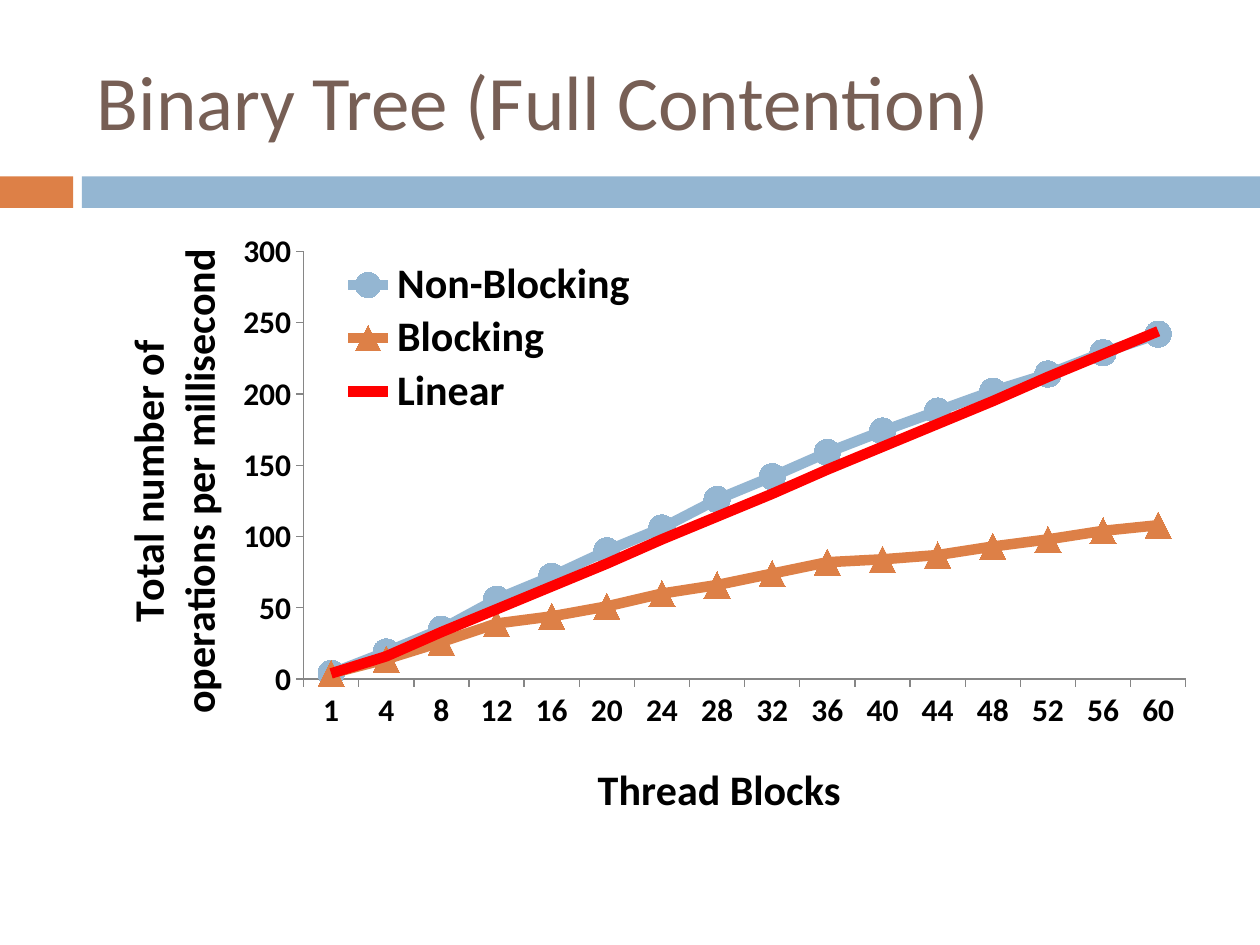
"""Build the Binary Tree (Full Contention) slide with its throughput line chart."""
from lxml import etree
from pptx import Presentation
from pptx.chart.data import CategoryChartData
from pptx.dml.color import RGBColor
from pptx.enum.chart import XL_CHART_TYPE as ChartType
from pptx.enum.chart import XL_LEGEND_POSITION as LegendPosition
from pptx.enum.chart import XL_MARKER_STYLE as MarkerStyle
from pptx.enum.chart import XL_TICK_MARK as TickMark
from pptx.enum.shapes import MSO_SHAPE as ShapeType
from pptx.enum.text import MSO_ANCHOR as Anchor
from pptx.oxml.ns import qn
from pptx.util import Inches, Pt

COLORS = {
    "blue": "94B6D2",
    "orange": "DD8047",
    "red": "FF0000",
    "brown": "775F55",
    "black": "000000",
    "gray": "868686",
}
FONT = "Calibri"


def style_font(font, size, color, bold=False):
    font.name = FONT
    font.size = Pt(size)
    font.bold = bold
    font.color.rgb = RGBColor.from_string(COLORS[color])


def place(element, index, inner=False, **fractions):
    for previous in element.findall(qn("c:layout")):
        element.remove(previous)
    layout = etree.Element(qn("c:layout"))
    manual = etree.SubElement(layout, qn("c:manualLayout"))
    settings = {"layoutTarget": "inner"} if inner else {}
    settings.update(xMode="edge", yMode="edge", **fractions)
    for tag, value in settings.items():
        etree.SubElement(manual, qn(f"c:{tag}")).set("val", str(value))
    element.insert(index, layout)


presentation = Presentation()
presentation.slide_width = Inches(10)
presentation.slide_height = Inches(7.5)
slide = presentation.slides.add_slide(presentation.slide_layouts[6])

for left, width, color in [(0, 0.58, "orange"), (0.65, 9.35, "blue")]:
    bar = slide.shapes.add_shape(
        ShapeType.RECTANGLE, Inches(left), Inches(1.4), Inches(width), Inches(0.25)
    )
    bar.shadow.inherit = False
    bar.fill.solid()
    bar.fill.fore_color.rgb = RGBColor.from_string(COLORS[color])
    bar.line.fill.background()

title = slide.shapes.add_textbox(Inches(0.67), Inches(0.25), Inches(8.92), Inches(1.08))
title.text_frame.word_wrap = True
title.text_frame.vertical_anchor = Anchor.MIDDLE
run = title.text_frame.paragraphs[0].add_run()
run.text = "Binary Tree (Full Contention)"
style_font(run.font, 44, "brown")

series_data = [
    ("Non-Blocking", "blue", MarkerStyle.CIRCLE,
     [4, 19, 35, 56, 72, 90, 106, 126, 142, 159, 174, 188, 202, 214, 229, 242]),
    ("Blocking", "orange", MarkerStyle.TRIANGLE,
     [4, 14, 26, 39, 44, 51, 60, 66, 74, 82, 84, 87, 93, 98, 104, 108]),
    ("Linear", "red", MarkerStyle.NONE,
     [4, 16, 33, 49, 65, 81, 98, 114, 130, 147, 163, 179, 195, 212, 228, 244]),
]
chart_data = CategoryChartData()
chart_data.categories = ["1"] + [str(blocks) for blocks in range(4, 61, 4)]
for name, color, marker, values in series_data:
    chart_data.add_series(name, values)

chart = slide.shapes.add_chart(
    ChartType.LINE_MARKERS,
    Inches(0.67), Inches(1.75), Inches(8.92), Inches(4.92), chart_data,
).chart
chart.has_title = False
style_font(chart.font, 10, "black")
chart.plots[0].vary_by_categories = False

for series, (name, color, marker, values) in zip(chart.plots[0].series, series_data):
    rgb = RGBColor.from_string(COLORS[color])
    series.smooth = False
    series.format.line.color.rgb = rgb
    series.format.line.width = Pt(6)
    series.marker.style = marker
    if marker != MarkerStyle.NONE:
        series.marker.size = 15
        series.marker.format.fill.solid()
        series.marker.format.fill.fore_color.rgb = rgb
        series.marker.format.line.fill.background()

axes = [
    (chart.category_axis, ["Thread Blocks"], 0.45, 0.86),
    (chart.value_axis, ["Total number of", "operations per millisecond"], 0.03, 0.04),
]
for axis, lines, x, y in axes:
    axis.has_major_gridlines = False
    axis.major_tick_mark = TickMark.OUTSIDE
    axis.minor_tick_mark = TickMark.NONE
    axis.format.line.color.rgb = RGBColor.from_string(COLORS["gray"])
    style_font(axis.tick_labels.font, 18, "black", bold=True)
    text_frame = axis.axis_title.text_frame
    for number, line in enumerate(lines):
        paragraph = text_frame.add_paragraph() if number else text_frame.paragraphs[0]
        run = paragraph.add_run()
        run.text = line
        style_font(run.font, 24, "black", bold=True)
    place(axis.axis_title._element, 1, x=x, y=y)

chart.value_axis.minimum_scale = 0
chart.value_axis.maximum_scale = 300
chart.value_axis.major_unit = 50

chart.has_legend = True
chart.legend.position = LegendPosition.LEFT
chart.legend.include_in_layout = True
style_font(chart.legend.font, 24, "black", bold=True)
place(chart.legend._element, 1, x=0.22, y=0.06, w=0.28, h=0.26)

plot_area = chart._chartSpace.find(".//" + qn("c:plotArea"))
place(plot_area, 0, inner=True, x=0.195, y=0.05, w=0.785, h=0.69)

presentation.save("out.pptx")
